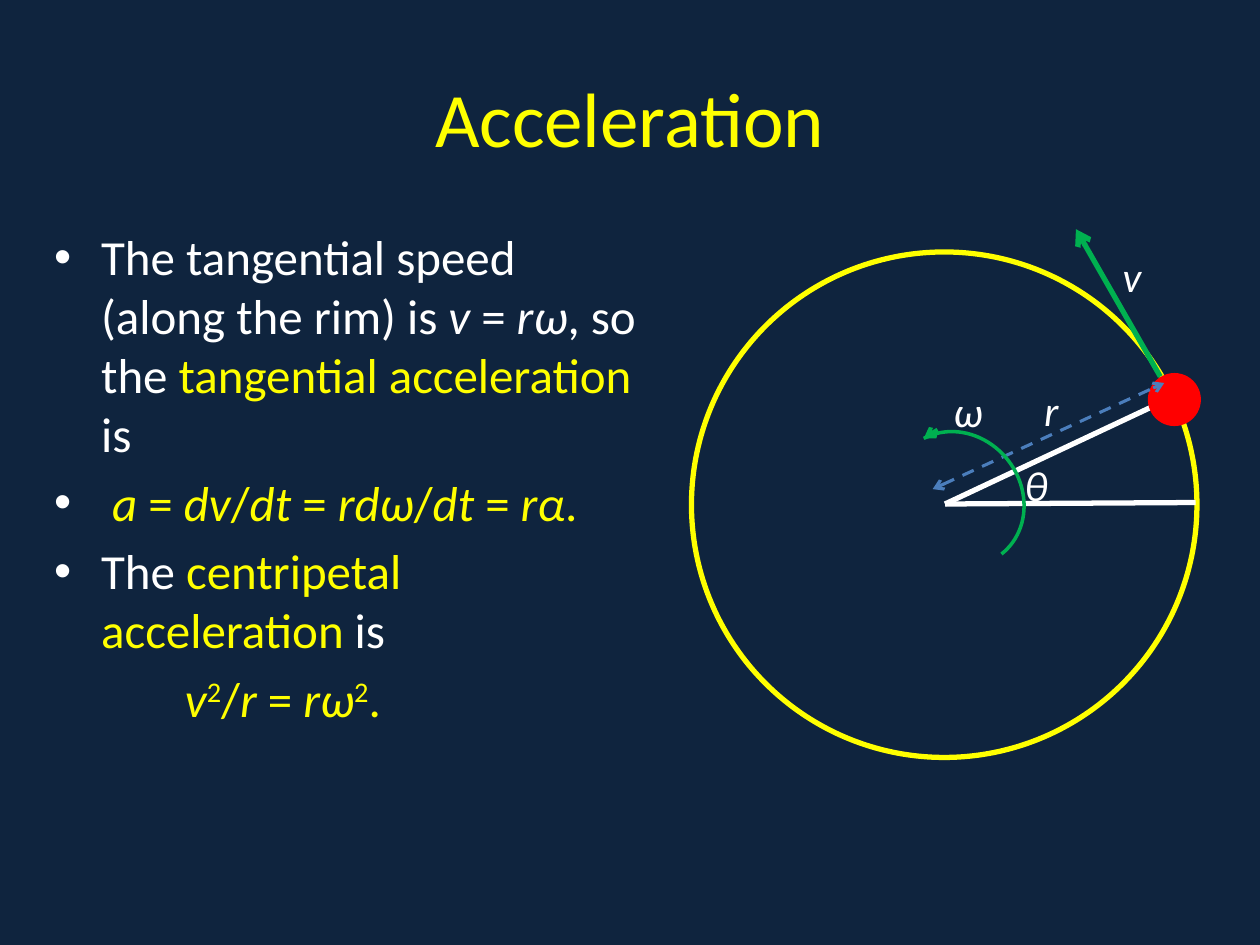
"""Build the slide on tangential and centripetal acceleration."""
from lxml.etree import SubElement
from pptx import Presentation
from pptx.dml.color import RGBColor
from pptx.enum.dml import MSO_LINE
from pptx.enum.shapes import MSO_CONNECTOR, MSO_SHAPE
from pptx.enum.text import MSO_ANCHOR, PP_ALIGN
from pptx.oxml.ns import qn
from pptx.util import Cm, Pt

COLORS = {"navy": "0F243E", "yellow": "FFFF00", "white": "FFFFFF",
          "red": "FF0000", "green": "00B050", "blue": "4B7EBC"}
FONT = "Calibri"
TITLE = "Acceleration"
TITLE_BOX = (1.27, 0.76, 22.86, 3.18)
BODY_BOX = (0.84, 4.45, 12.5, 12.57)

PLAIN, ITALIC, SUPER = "plain", "italic", "super"
BODY = [
    (True, [("The tangential speed (along the rim) is ", "white", PLAIN),
            ("v", "white", ITALIC), (" = ", "white", PLAIN),
            ("rω", "white", ITALIC), (", so the ", "white", PLAIN),
            ("tangential acceleration", "yellow", PLAIN), (" is", "white", PLAIN)]),
    (True, [(" ", "white", PLAIN), ("a ", "yellow", ITALIC), ("= ", "yellow", PLAIN),
            ("dv", "yellow", ITALIC), ("/", "yellow", PLAIN),
            ("dt", "yellow", ITALIC), (" = ", "yellow", PLAIN),
            ("rdω", "yellow", ITALIC), ("/", "yellow", PLAIN),
            ("dt", "yellow", ITALIC), (" = ", "yellow", PLAIN),
            ("rα", "yellow", ITALIC), (".", "yellow", PLAIN)]),
    (True, [("The ", "white", PLAIN), ("centripetal acceleration ", "yellow", PLAIN),
            ("is", "white", PLAIN)]),
    (False, [("v", "yellow", ITALIC), ("2", "yellow", SUPER), ("/", "yellow", PLAIN),
             ("r", "yellow", ITALIC), (" = ", "yellow", PLAIN),
             ("rω", "yellow", ITALIC), ("2", "yellow", SUPER), (".", "yellow", PLAIN)]),
]

CENTER = (19.05, 10.16)
RIM = (13.94, 5.08, 10.19, 10.19)
BALL = (23.14, 7.52, 1.07, 1.07)
TURN = (17.91, 8.79, 2.82, 2.54)
SPOKES = [(CENTER, (24.1, 10.13)), (CENTER, (23.65, 8))]
RADIUS = ((18.8, 9.86), (23.47, 7.72))
VELOCITY = ((23.39, 7.59), (21.69, 4.62))
TURN_TIP = ((18.9, 8.66), (18.62, 8.84))
LABELS = [("θ", 20.4, 9.14, 1.27), ("r", 20.8, 7.62, 1.27),
          ("v", 22.38, 4.93, 1.07), ("ω", 18.97, 7.65, 1.07)]


def rgb(name):
    return RGBColor.from_string(COLORS[name])


def style_span(span, size, color, style=PLAIN):
    span.font.name = FONT
    span.font.size = Pt(size)
    span.font.color.rgb = rgb(color)
    span.font.italic = style == ITALIC
    if style == SUPER:
        span.font._element.set("baseline", "30000")


def add_box(page, area):
    box = page.shapes.add_textbox(*map(Cm, area))
    box.text_frame.word_wrap = True
    return box.text_frame


def add_body(page):
    frame = add_box(page, BODY_BOX)
    for index, (bulleted, spans) in enumerate(BODY):
        para = frame.add_paragraph() if index else frame.paragraphs[0]
        para.space_before = Pt(5.6)
        props = para._p.get_or_add_pPr()
        props.set("marL", str(Cm(0.95 if bulleted else 2.64)))
        props.set("indent", str(Cm(-0.95 if bulleted else 0)))
        if bulleted:
            SubElement(props, qn("a:buFont"), typeface="Arial")
            SubElement(props, qn("a:buChar"), char="•")
        else:
            SubElement(props, qn("a:buNone"))
        for words, color, style in spans:
            span = para.add_run()
            span.text = words
            style_span(span, 28, color, style)


def add_outline(page, kind, area, color, width, fill=None):
    shape = page.shapes.add_shape(kind, *map(Cm, area))
    shape.shadow.inherit = False
    if fill:
        shape.fill.solid()
        shape.fill.fore_color.rgb = rgb(fill)
        shape.line.fill.background()
    else:
        shape.fill.background()
        shape.line.color.rgb = rgb(color)
        shape.line.width = Pt(width)
    return shape


def add_line(page, ends, color, width, heads=(), dashed=False):
    start, end = ends
    line = page.shapes.add_connector(MSO_CONNECTOR.STRAIGHT, *map(Cm, start + end))
    line.line.color.rgb = rgb(color)
    line.line.width = Pt(width)
    if dashed:
        line.line.dash_style = MSO_LINE.DASH
    for head in heads:
        SubElement(line.line._get_or_add_ln(), qn(f"a:{head}"), type="arrow")
    SubElement(line._element.spPr, qn("a:effectLst"))


def add_diagram(page):
    add_outline(page, MSO_SHAPE.OVAL, RIM, "yellow", 3)
    for spoke in SPOKES:
        add_line(page, spoke, "white", 3)
    add_outline(page, MSO_SHAPE.OVAL, BALL, None, 0, fill="red")
    add_line(page, RADIUS, "blue", 1.75, ("headEnd", "tailEnd"), dashed=True)
    add_line(page, VELOCITY, "green", 3, ("tailEnd",))
    turn = add_outline(page, MSO_SHAPE.ARC, TURN, "green", 2)
    turn.rotation = 52
    turn.adjustments[0] = 112.95
    turn.adjustments[1] = 0
    add_line(page, TURN_TIP, "green", 2.25, ("tailEnd",))
    for words, left, top, width in LABELS:
        frame = add_box(page, (left, top, width, 1.27))
        frame.text = words
        style_span(frame.paragraphs[0].runs[0], 24, "white", ITALIC)


def main():
    deck = Presentation()
    deck.slide_width, deck.slide_height = Cm(25.4), Cm(19.05)
    page = deck.slides.add_slide(deck.slide_layouts[5])
    page.background.fill.solid()
    page.background.fill.fore_color.rgb = rgb("navy")

    title = page.shapes.title
    title.left, title.top, title.width, title.height = map(Cm, TITLE_BOX)
    title.text_frame.text = TITLE
    title.text_frame.vertical_anchor = MSO_ANCHOR.MIDDLE
    para = title.text_frame.paragraphs[0]
    para.alignment = PP_ALIGN.CENTER
    style_span(para.runs[0], 44, "yellow")

    add_body(page)
    add_diagram(page)
    deck.save("out.pptx")


if __name__ == "__main__":
    main()
